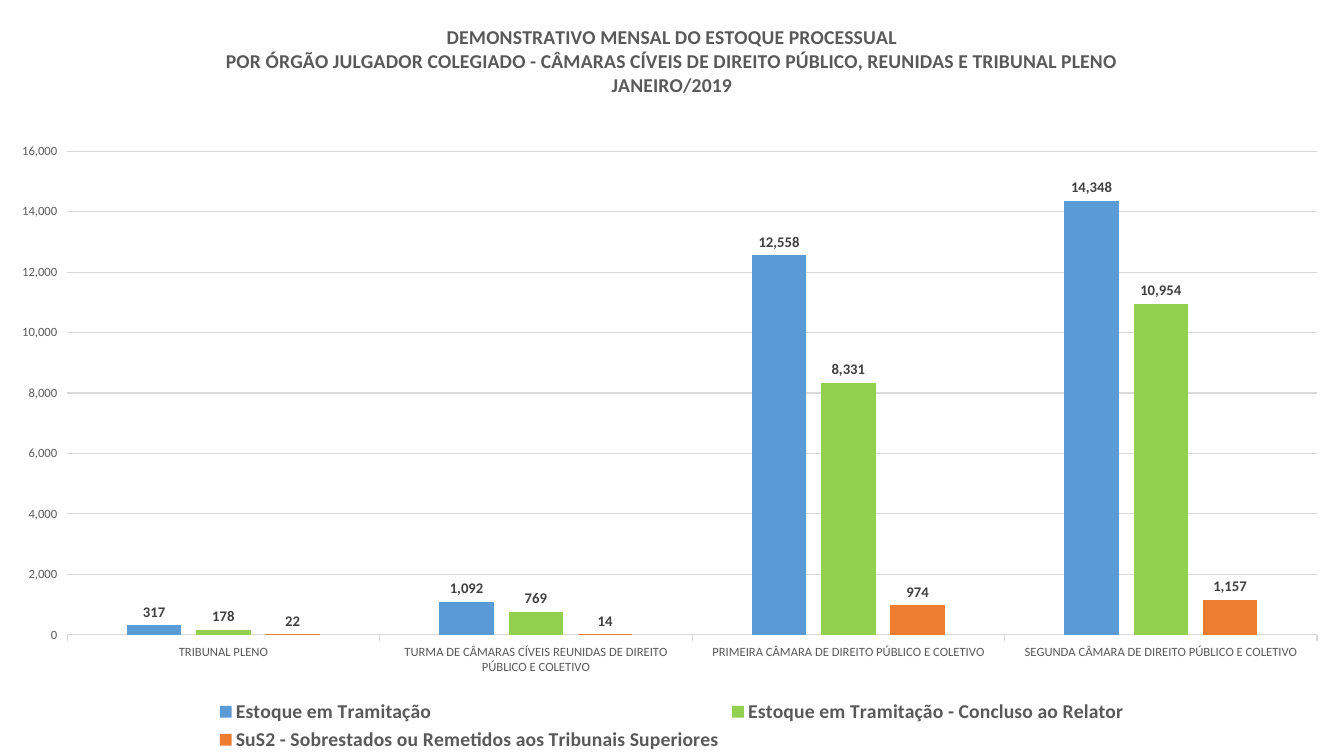
from lxml import etree
from pptx import Presentation
from pptx.chart.data import CategoryChartData
from pptx.dml.color import RGBColor
from pptx.enum.chart import XL_CHART_TYPE, XL_LABEL_POSITION, XL_LEGEND_POSITION, XL_TICK_MARK
from pptx.oxml.ns import qn
from pptx.util import Pt

CLUSTERED = XL_CHART_TYPE.COLUMN_CLUSTERED
OUTSIDE_END = XL_LABEL_POSITION.OUTSIDE_END
BOTTOM = XL_LEGEND_POSITION.BOTTOM
TICK_OUT = XL_TICK_MARK.OUTSIDE
COLORS = {
    "text": "595959",
    "label": "404040",
    "line": "D9D9D9",
    "blue": "5B9BD5",
    "green": "92D050",
    "orange": "ED7D31",
}
TITLE_LINES = [
    "DEMONSTRATIVO MENSAL DO ESTOQUE PROCESSUAL",
    "POR ÓRGÃO JULGADOR COLEGIADO - CÂMARAS CÍVEIS DE DIREITO PÚBLICO, REUNIDAS E TRIBUNAL PLENO",
    "JANEIRO/2019",
]
CATEGORIES = [
    "TRIBUNAL PLENO",
    "TURMA DE CÂMARAS CÍVEIS REUNIDAS DE DIREITO PÚBLICO E COLETIVO",
    "PRIMEIRA CÂMARA DE DIREITO PÚBLICO E COLETIVO",
    "SEGUNDA CÂMARA DE DIREITO PÚBLICO E COLETIVO",
]
SERIES = [
    ("Estoque em Tramitação", [317, 1092, 12558, 14348], "blue"),
    ("Estoque em Tramitação - Concluso ao Relator", [178, 769, 8331, 10954], "green"),
    ("SuS2 - Sobrestados ou Remetidos aos Tribunais Superiores", [22, 14, 974, 1157], "orange"),
]
PLOT_AREA = {"x": 0.05, "y": 0.2, "w": 0.93, "h": 0.64}


def rgb(name):
    return RGBColor.from_string(COLORS[name])


def style_font(font, size, color, bold=False):
    font.name = "Calibri"
    font.size = Pt(size)
    font.bold = bold
    font.color.rgb = rgb(color)


deck = Presentation()
deck.slide_width = Pt(960)
deck.slide_height = Pt(540)
page = deck.slides.add_slide(deck.slide_layouts[6])

data = CategoryChartData(number_format="#,##0")
data.categories = CATEGORIES
for name, values, color in SERIES:
    data.add_series(name, values)
chart = page.shapes.add_chart(CLUSTERED, Pt(0), Pt(0), deck.slide_width, deck.slide_height, data).chart
style_font(chart.font, 10, "text")

title = chart.chart_title
title.include_in_layout = False
frame = title.text_frame
for index, line in enumerate(TITLE_LINES):
    para = frame.add_paragraph() if index else frame.paragraphs[0]
    span = para.add_run()
    span.text = line
    style_font(span.font, 14, "text", True)

chart.has_legend = True
chart.legend.position = BOTTOM
chart.legend.include_in_layout = False
style_font(chart.legend.font, 14, "text", True)

plot = chart.plots[0]
plot.gap_width = 219
plot.overlap = -27
plot.vary_by_categories = False
for series, (name, values, color) in zip(plot.series, SERIES):
    series.format.fill.solid()
    series.format.fill.fore_color.rgb = rgb(color)
    series.invert_if_negative = False
    labels = series.data_labels
    labels.show_value = True
    labels.position = OUTSIDE_END
    labels.number_format = "#,##0"
    labels.number_format_is_linked = False
    style_font(labels.font, 10.5, "label", True)

for axis in (chart.category_axis, chart.value_axis):
    axis.major_tick_mark = TICK_OUT
    style_font(axis.tick_labels.font, 9, "text")

values_axis = chart.value_axis
values_axis.minimum_scale = 0
values_axis.maximum_scale = 16000
values_axis.major_unit = 2000
values_axis.tick_labels.number_format = "#,##0"
values_axis.tick_labels.number_format_is_linked = False
values_axis.format.line.fill.background()
for line in (chart.category_axis.format.line, values_axis.major_gridlines.format.line):
    line.color.rgb = rgb("line")
    line.width = Pt(0.75)

plot_area = chart.element.find(".//" + qn("c:plotArea"))
layout = plot_area.find(qn("c:layout"))
if layout is None:
    layout = etree.Element(qn("c:layout"))
    plot_area.insert(0, layout)
manual = etree.SubElement(layout, qn("c:manualLayout"))
settings = {"layoutTarget": "inner", "xMode": "edge", "yMode": "edge", **PLOT_AREA}
for tag, value in settings.items():
    etree.SubElement(manual, qn("c:" + tag)).set("val", str(value))

deck.save("out.pptx")
